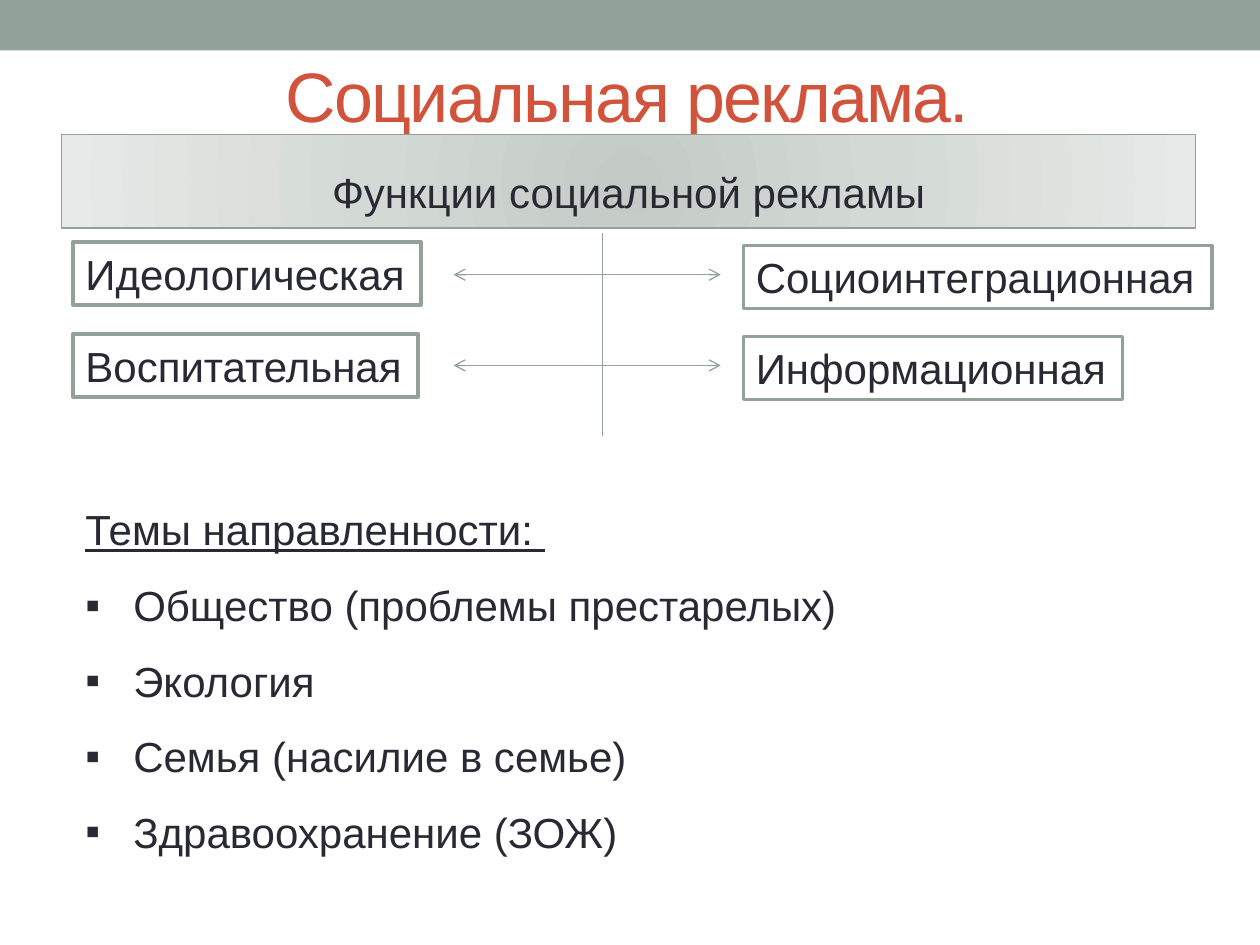
from lxml import etree
from pptx import Presentation
from pptx.dml.color import RGBColor
from pptx.enum import shapes, text
from pptx.oxml import parse_xml
from pptx.oxml.ns import nsdecls, qn
from pptx.util import Inches, Pt

SAGE, INK, RED, WHITE = "93A299", "292934", "D2533C", "FFFFFF"
GRADIENT = [(0, "C4CAC6"), (45, "D3DAD6"), (100, "E7EAE8")]
LEFT_EDGE, RIGHT_EDGE = 0.58, 5.9
FUNCTIONS = [
    ("Идеологическая", LEFT_EDGE, 1.92, 2.76),
    ("Социоинтеграционная", RIGHT_EDGE, 1.95, 3.72),
    ("Воспитательная", LEFT_EDGE, 2.65, 2.74),
    ("Информационная", RIGHT_EDGE, 2.67, 3.01),
]
TOPICS = [
    "Общество (проблемы престарелых)",
    "Экология",
    "Семья (насилие в семье)",
    "Здравоохранение (ЗОЖ)",
]
STEM_X = 4.78


def color(value):
    return RGBColor.from_string(value)


def place(shape, left, top, width, height):
    shape.left, shape.top = Inches(left), Inches(top)
    shape.width, shape.height = Inches(width), Inches(height)


def outline(shape, width):
    shape.line.color.rgb = color(SAGE)
    shape.line.width = Pt(width)


def style(para, size=24, value=INK, align=text.PP_ALIGN.LEFT):
    para.font.size = Pt(size)
    para.font.name = "Arial"
    para.font.color.rgb = color(value)
    para.alignment = align


def add_band(page):
    band = page.shapes.add_shape(
        shapes.MSO_SHAPE.RECTANGLE, 0, 0, Inches(10), Inches(0.4))
    band.shadow.inherit = False
    band.fill.solid()
    band.fill.fore_color.rgb = color(SAGE)
    band.line.fill.background()


def set_title(page):
    title = page.shapes.title
    place(title, 0.48, 0.21, 9, 1.08)
    frame = title.text_frame
    frame.auto_size = text.MSO_AUTO_SIZE.NONE
    frame.vertical_anchor = text.MSO_ANCHOR.MIDDLE
    para = frame.paragraphs[0]
    span = para.add_run()
    span.text = "Социальная реклама."
    span.font.size = Pt(40)
    span._r.get_or_add_rPr().set("spc", "-100")
    style(para, 40, RED, text.PP_ALIGN.CENTER)


def fill_radial(shape):
    """Fill with a circular gradient that starts at the centre."""
    shape.fill.gradient()
    stops = "".join(
        f'<a:gs pos="{pos * 1000}"><a:srgbClr val="{value}"/></a:gs>'
        for pos, value in GRADIENT)
    radial = parse_xml(
        f'<a:gradFill {nsdecls("a")} rotWithShape="1"><a:gsLst>{stops}</a:gsLst>'
        '<a:path path="circle"><a:fillToRect l="50000" t="50000" r="50000" b="50000"/>'
        '</a:path></a:gradFill>')
    properties = shape._element.spPr
    properties.replace(properties.find(qn("a:gradFill")), radial)


def set_heading(page):
    heading = page.placeholders[1]
    place(heading, 0.49, 1.07, 9, 0.74)
    fill_radial(heading)
    outline(heading, 0.75)
    frame = heading.text_frame
    frame.auto_size = text.MSO_AUTO_SIZE.NONE
    para = frame.paragraphs[0]
    para.text = "Функции социальной рекламы"
    style(para, align=text.PP_ALIGN.CENTER)
    para.line_spacing = 1.5
    para.space_before = Pt(4.8)
    set_bullet(para)


def set_bullet(para, mark=None, indent=0):
    properties = para._p.get_or_add_pPr()
    properties.set("marL", str(Inches(indent)))
    properties.set("indent", str(-Inches(indent)))
    if mark:
        etree.SubElement(properties, qn("a:buFont")).set("typeface", "Arial")
        bullet = etree.Element(qn("a:buChar"), char=mark)
    else:
        bullet = etree.Element(qn("a:buNone"))
    properties.append(bullet)
    # Default run properties must follow the bullet.
    defaults = properties.find(qn("a:defRPr"))
    if defaults is not None:
        properties.append(defaults)


def add_function(page, label, left, top, width):
    box = page.shapes.add_textbox(
        Inches(left), Inches(top), Inches(width), Inches(0.5))
    box.fill.solid()
    box.fill.fore_color.rgb = color(WHITE)
    outline(box, 2.08)
    box.text_frame.word_wrap = False
    box.text_frame.auto_size = text.MSO_AUTO_SIZE.SHAPE_TO_FIT_TEXT
    para = box.text_frame.paragraphs[0]
    para.text = label
    style(para)


def add_line(page, start, end, arrow=False):
    line = page.shapes.add_connector(
        shapes.MSO_CONNECTOR.STRAIGHT, *map(Inches, start + end))
    outline(line, 0.75)
    if arrow:
        etree.SubElement(line.line._get_or_add_ln(), qn("a:tailEnd"), type="arrow")
    etree.SubElement(line._element.spPr, qn("a:effectLst"))


def add_topics(page):
    box = page.shapes.add_textbox(
        Inches(LEFT_EDGE), Inches(3.75), Inches(8.9), Inches(3.13))
    frame = box.text_frame
    frame.word_wrap = True
    frame.auto_size = text.MSO_AUTO_SIZE.SHAPE_TO_FIT_TEXT
    intro = frame.paragraphs[0]
    intro.text = "Темы направленности: "
    intro.runs[0].font.underline = True
    for topic in TOPICS:
        para = frame.add_paragraph()
        para.text = topic
        set_bullet(para, "▪", 0.38)
    for para in frame.paragraphs:
        style(para, align=text.PP_ALIGN.JUSTIFY)
        para.line_spacing = 1.5


def main():
    deck = Presentation()
    deck.slide_width, deck.slide_height = Inches(10), Inches(7.5)
    page = deck.slides.add_slide(deck.slide_layouts[1])
    add_band(page)
    set_title(page)
    set_heading(page)
    for function in FUNCTIONS:
        add_function(page, *function)
    add_line(page, (STEM_X, 1.85), (STEM_X, 3.46))
    for y in (2.18, 2.9):
        for end_x in (3.6, 5.72):
            add_line(page, (STEM_X, y), (end_x, y), arrow=True)
    add_topics(page)
    deck.save("out.pptx")


if __name__ == "__main__":
    main()
